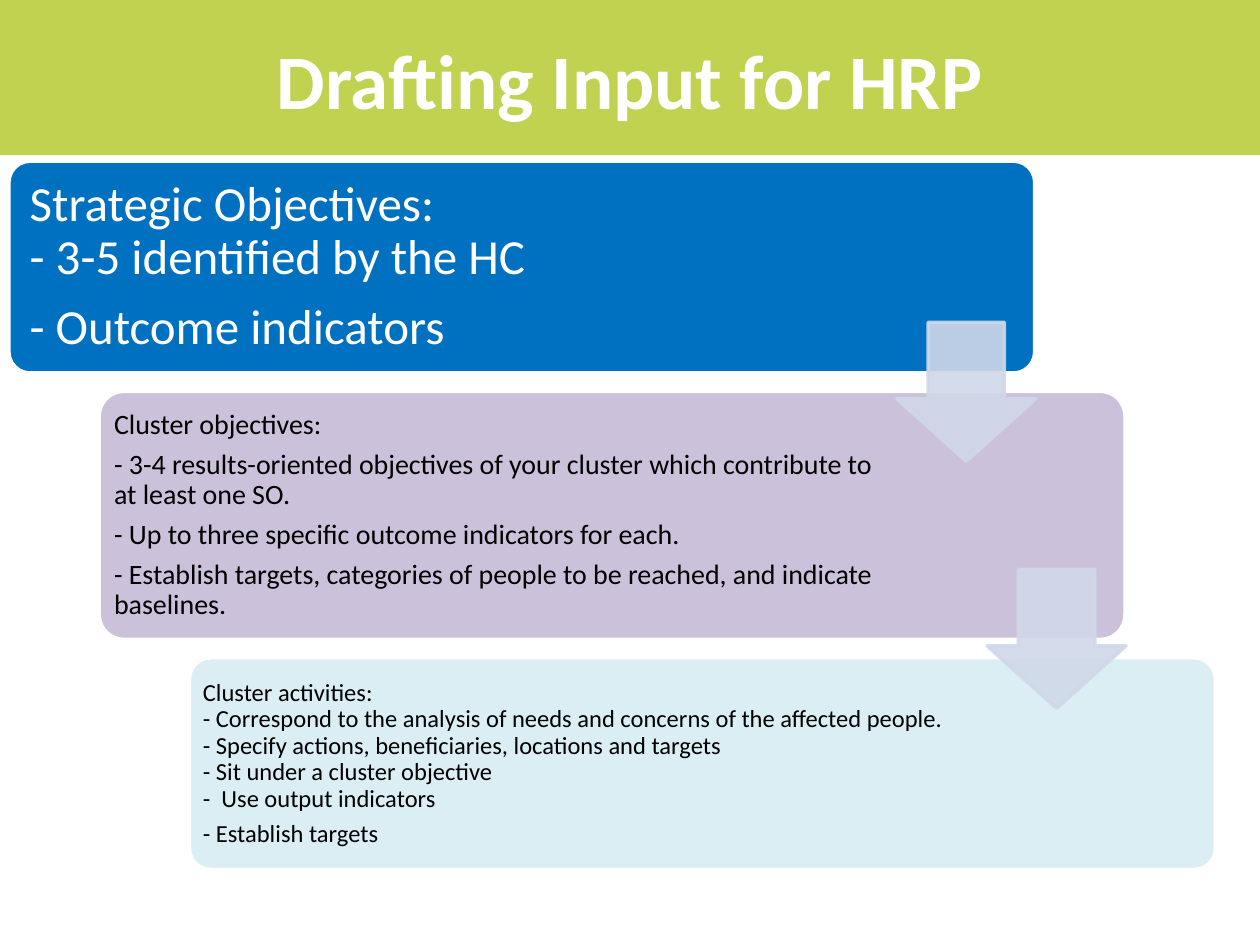
"""Build the "Drafting Input for HRP" slide: three stepped cards linked by arrows."""
from dataclasses import dataclass

from lxml import etree
from pptx import Presentation, util as u
from pptx.dml.color import RGBColor
from pptx.enum import shapes, text
from pptx.oxml import ns


@dataclass(frozen=True)
class Theme:
    """Hold the colours, font and type sizes of the slide."""
    font: str = "Calibri"
    white: str = "FFFFFF"
    black: str = "000000"
    banner: str = "C1D150"
    strategic: str = "0070C0"
    objectives: str = "CCC1DA"
    activities: str = "DBEEF4"
    arrow: str = "D0D8E8"
    title_size: int = 44
    strategic_size: int = 28
    objectives_size: int = 16
    activities_size: int = 14
    outline: int = 2
    arrow_alpha: int = 90


@dataclass(frozen=True)
class Card:
    """Describe one step; lengths are in centimetres."""
    fill: str
    color: str
    size: int
    height: float
    text_width: float
    inset: float
    paragraphs: tuple


THEME = Theme()
CARD_LEFT, CARD_TOP, CARD_WIDTH = 0.18, 3.25, 20.68
CARD_STEP, CARD_GAP, CARD_PADDING = 1.82, 0.37, 0.12
ARROW_OFFSET, ARROW_SIZE, ARROW_TOPS = 17.9, 2.8, (6.5, 11.48)

CARDS = (
    Card(THEME.strategic, THEME.white, THEME.strategic_size, 4.27, 16.05, 0.3, (
        "Strategic Objectives:\v- 3-5 identified by the HC",
        "- Outcome indicators")),
    Card(THEME.objectives, THEME.black, THEME.objectives_size, 5, 15.77, 0.18, (
        "Cluster objectives:",
        "- 3-4 results-oriented objectives of your cluster which contribute to at least one SO.",
        "- Up to three specific outcome indicators for each.",
        "- Establish targets, categories of people to be reached, and indicate baselines.")),
    Card(THEME.activities, THEME.black, THEME.activities_size, 4.27, 15.82, 0.15, (
        "Cluster activities:"
        "\v- Correspond to the analysis of needs and concerns of the affected people."
        "\v- Specify actions, beneficiaries, locations and targets"
        "\v- Sit under a cluster objective"
        "\v-  Use output indicators",
        "- Establish targets")),
)


def apply_format(target, values):
    """Set each named attribute of the target."""
    for name, value in values.items():
        setattr(target, name, value)


def add_block(slide, kind, box, fill, line=None, adjustments=()):
    """Add a filled preset shape without shadow."""
    shape = slide.shapes.add_shape(kind, *map(u.Cm, box))
    shape.shadow.inherit = False
    for index, value in enumerate(adjustments):
        shape.adjustments[index] = value
    shape.fill.solid()
    shape.fill.fore_color.rgb = RGBColor.from_string(fill)
    if line:
        shape.line.color.rgb = RGBColor.from_string(line)
        shape.line.width = u.Pt(THEME.outline)
    else:
        shape.line.fill.background()
    return shape


def add_text(slide, box, paragraphs, inset, font, layout):
    """Add a wrapped, vertically centred text box."""
    frame = slide.shapes.add_textbox(*map(u.Cm, box)).text_frame
    apply_format(frame, {"word_wrap": True, "vertical_anchor": text.MSO_ANCHOR.MIDDLE})
    for side in ("left", "right", "top", "bottom"):
        setattr(frame, f"margin_{side}", u.Cm(inset))
    for index, content in enumerate(paragraphs):
        paragraph = frame.add_paragraph() if index else frame.paragraphs[0]
        paragraph.text = content
        apply_format(paragraph, layout)
        for run in paragraph.runs:
            apply_format(run.font, {"name": THEME.font, "size": u.Pt(font["size"]),
                                    "bold": font.get("bold", False)})
            run.font.color.rgb = RGBColor.from_string(font["color"])


def add_title(slide):
    """Add the banner and its centred title."""
    add_block(slide, shapes.MSO_SHAPE.RECTANGLE, (0, -0.05, 25.4, 3.18), THEME.banner)
    add_text(slide, (0, 0, 25.4, 3.18), ["Drafting Input for HRP"], 0.13,
             {"size": THEME.title_size, "color": THEME.white, "bold": True},
             {"alignment": text.PP_ALIGN.CENTER})


def add_card(slide, card, left, top):
    """Add a rounded card with its text."""
    add_block(slide, shapes.MSO_SHAPE.ROUNDED_RECTANGLE,
              (left, top, CARD_WIDTH, card.height), card.fill, THEME.white, (0.1,))
    box = (left + CARD_PADDING, top + CARD_PADDING,
           card.text_width, card.height - 2 * CARD_PADDING)
    add_text(slide, box, card.paragraphs, card.inset,
             {"size": card.size, "color": card.color},
             {"alignment": text.PP_ALIGN.LEFT, "line_spacing": 0.9,
              "space_after": u.Pt(round(card.size * 0.35, 1))})


def add_arrow(slide, left, top):
    """Add a slightly transparent down arrow."""
    arrow = add_block(slide, shapes.MSO_SHAPE.DOWN_ARROW,
                      (left, top, ARROW_SIZE, ARROW_SIZE),
                      THEME.arrow, THEME.arrow, (0.55, 0.45))
    for color in arrow.element.spPr.iter(ns.qn("a:srgbClr")):
        alpha = etree.SubElement(color, ns.qn("a:alpha"))
        alpha.set("val", str(THEME.arrow_alpha * 1000))


def main():
    """Build and save the presentation."""
    presentation = Presentation()
    apply_format(presentation, {"slide_width": u.Cm(25.4), "slide_height": u.Cm(19.05)})
    slide = presentation.slides.add_slide(presentation.slide_layouts[6])
    add_title(slide)
    top = CARD_TOP
    for index, card in enumerate(CARDS):
        add_card(slide, card, CARD_LEFT + index * CARD_STEP, top)
        top += card.height + CARD_GAP
    for index, arrow_top in enumerate(ARROW_TOPS):
        add_arrow(slide, CARD_LEFT + index * CARD_STEP + ARROW_OFFSET, arrow_top)
    presentation.save("out.pptx")


if __name__ == "__main__":
    main()
